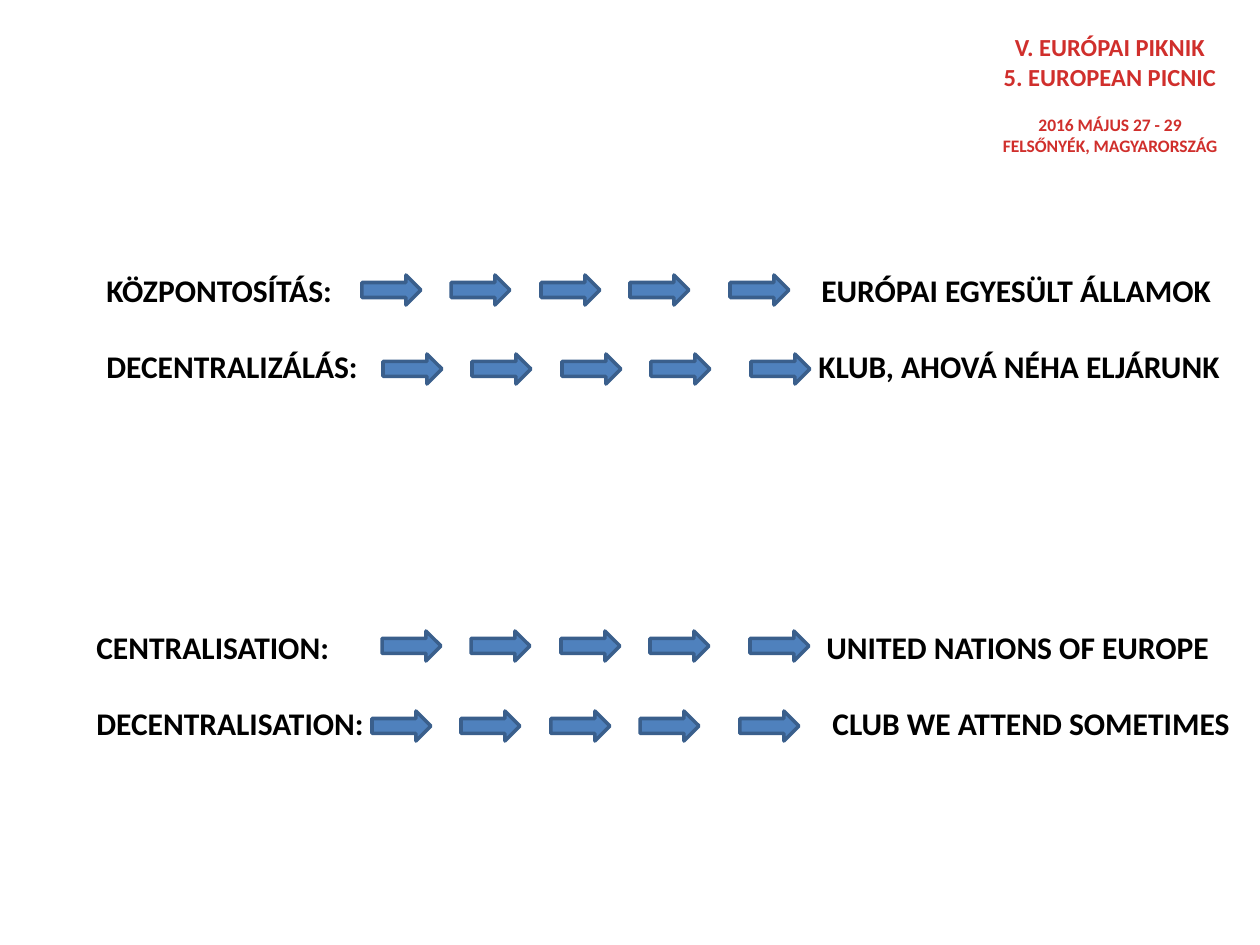
from lxml.etree import SubElement
from pptx import Presentation
from pptx.dml.color import RGBColor
from pptx.enum.shapes import MSO_SHAPE
from pptx.enum.text import MSO_ANCHOR, MSO_AUTO_SIZE, PP_ALIGN
from pptx.oxml.ns import qn
from pptx.util import Inches, Pt

STEPS = (0, 89, 179, 268, 368)
ROWS = ((362, 275), (383, 354), (382, 631), (372, 711))
HEAD = (
    ("V. EURÓPAI PIKNIK", 14, 0),
    ("5. EUROPEAN PICNIC", 14, 0),
    ("2016 MÁJUS 27 - 29", 10, 13),
    ("FELSŐNYÉK, MAGYARORSZÁG", 10, 0),
)
HUNGARIAN = (
    ("KÖZPONTOSÍTÁS:", "EURÓPAI EGYESÜLT ÁLLAMOK", 715),
    ("DECENTRALIZÁLÁS:", "KLUB, AHOVÁ NÉHA ELJÁRUNK", 712),
)
ENGLISH = (
    ("CENTRALISATION:", "UNITED NATIONS OF EUROPE", 730),
    ("DECENTRALISATION:", "CLUB WE ATTEND SOMETIMES", 736),
)


def px(n):
    """Turn pixels into EMU."""
    return round(n * Inches(1) / 126)


def paint(color, code):
    """Set a colour format from a hex string."""
    color.rgb = RGBColor.from_string(code)


def style(para, size, code, gap):
    """Format the runs of a paragraph and the space above it."""
    para.space_before = Pt(gap)
    for run in para.runs:
        run.font.name = "Calibri"
        run.font.size = Pt(size)
        run.font.bold = True
        paint(run.font.color, code)


def add_head(slide):
    """Fill the title placeholder with the event and its date."""
    title = slide.shapes.title
    title.left, title.top = px(987), px(26)
    title.width, title.height = px(246), px(137)
    frame = title.text_frame
    frame.auto_size = MSO_AUTO_SIZE.NONE
    frame.vertical_anchor = MSO_ANCHOR.TOP
    frame.text = "\n".join(text for text, _, _ in HEAD)
    for para, (_, size, gap) in zip(frame.paragraphs, HEAD):
        para.alignment = PP_ALIGN.CENTER
        style(para, size, "D02F2C", gap)


def add_stop(para, pos):
    """Give a paragraph one left tab stop."""
    tabs = SubElement(para._p.get_or_add_pPr(), qn("a:tabLst"))
    SubElement(tabs, qn("a:tab"), pos=str(px(pos)), algn="l")


def add_pairs(slide, left, top, width, pairs):
    """Add a text box of terms, each with its outcome at a tab stop."""
    box = slide.shapes.add_textbox(px(left), px(top), px(width), px(127))
    frame = box.text_frame
    frame.word_wrap = True
    frame.text = "\n".join(f"{term}\t{goal}" for term, goal, _ in pairs)
    for i, (para, pair) in enumerate(zip(frame.paragraphs, pairs)):
        style(para, 18, "000000", 22 * i)
        add_stop(para, pair[2])


def add_arrows(slide, left, top):
    """Add one row of block arrows."""
    for step in STEPS:
        arrow = slide.shapes.add_shape(
            MSO_SHAPE.RIGHT_ARROW, px(left + step), px(top), px(59), px(30)
        )
        arrow.shadow.inherit = False
        arrow.fill.solid()
        paint(arrow.fill.fore_color, "4F81BD")
        paint(arrow.line.color, "3A5F8C")
        arrow.line.width = Pt(2)


def main():
    """Build and save the slide."""
    deck = Presentation()
    deck.slide_width, deck.slide_height = px(1260), px(945)
    slide = deck.slides.add_slide(deck.slide_layouts[5])
    add_head(slide)
    add_pairs(slide, 94, 265, 1149, HUNGARIAN)
    add_pairs(slide, 84, 622, 1172, ENGLISH)
    for left, top in ROWS:
        add_arrows(slide, left, top)
    deck.save("out.pptx")


if __name__ == "__main__":
    main()
